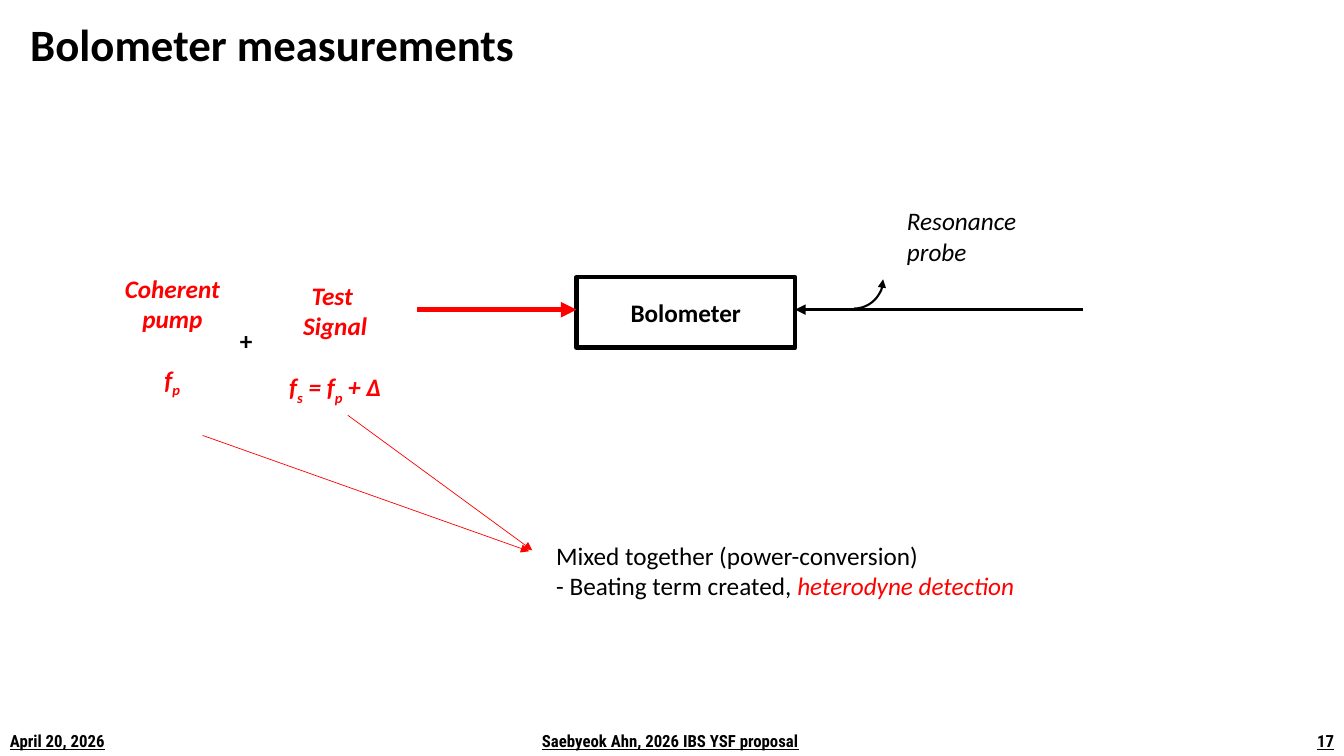
import pptx
import pptx.util
import pptx.dml.color
import pptx.enum.shapes
import pptx.enum.text
import pptx.oxml
from pptx.oxml.ns import qn

Pt = pptx.util.Pt
RGB = pptx.dml.color.RGBColor
ALIGN = pptx.enum.text.PP_ALIGN
ANCHOR = pptx.enum.text.MSO_ANCHOR
SHAPE = pptx.enum.shapes.MSO_SHAPE

BLACK = RGB(0, 0, 0)
RED = RGB(255, 0, 0)

PLAIN = dict(name="Calibri", size=Pt(18), color=BLACK)
BOLD = dict(PLAIN, bold=True)
SLANT = dict(PLAIN, italic=True)
PUMP = dict(BOLD, italic=True, color=RED)
SUB = dict(PUMP, base="-25000")
HEAD = dict(BOLD, size=Pt(32))
FOOT = dict(name="Roboto Condensed", size=Pt(12), color=BLACK,
            bold=True, underline=True)

WIDE, HIGH = 960, 540
FOOT_H = 21.6
FOOT_Y = HIGH - FOOT_H
GAP = 22
BEAM_Y = 221.2
BOX = (411.8, 198, 156.2, 50.4)
BOX_END = BOX[0] + BOX[2]
ARC = (589, 178.6, 41.8, 41.8)

TITLE = [(0, [("Bolometer measurements", HEAD)])]
LABEL = [(0, [("Bolometer", BOLD)])]

NOTES = [
    ((640.8, 143.3, 98.6, 51), ALIGN.LEFT,
     [(0, [("Resonance probe", SLANT)])]),
    ((66.2, 191.5, 113.8, 94.3), ALIGN.CENTER,
     [(0, [("Coherent pump", PUMP)]),
      (GAP, [("f", PUMP), ("p", SUB)])]),
    ((164.2, 229, 41.8, 28.8), ALIGN.LEFT,
     [(0, [("+", BOLD)])]),
    ((177.8, 196.6, 123.1, 94.3), ALIGN.CENTER,
     [(0, [("Test ", PUMP)]),
      (0, [("Signal", PUMP)]),
      (GAP, [("f", PUMP), ("s", SUB), (" = f", PUMP), ("p", SUB),
             (" + Δ", PUMP)])]),
    ((390.2, 382.3, 358.6, 51), ALIGN.LEFT,
     [(0, [("Mixed together (power-conversion)", PLAIN)]),
      (0, [("- Beating term created, ", PLAIN),
           ("heterodyne detection", dict(SLANT, color=RED))])]),
]

FEET = [
    ("April 20, 2026", 0, 216, ALIGN.LEFT),
    ("Saebyeok Ahn, 2026 IBS YSF proposal", 316.8, 324, ALIGN.CENTER),
    ("17", WIDE - 216, 216, ALIGN.RIGHT),
]

ARROWS = [
    ((773.3, BEAM_Y), (BOX_END, BEAM_Y), BLACK, 2.5),
    ((298.1, BEAM_Y), (BOX[0], BEAM_Y), RED, 3.75),
    ((144.7, 311), (378, 393.8), RED, 0.5),
    ((248.4, 296.6), (380.2, 393.1), RED, 0.5),
]


def style(run, look):
    for key, val in look.items():
        if key == "color":
            run.font.color.rgb = val
        elif key == "base":
            run._r.get_or_add_rPr().set("baseline", val)
        else:
            setattr(run.font, key, val)


def write(shape, paras, align, anchor=ANCHOR.TOP):
    frame = shape.text_frame
    frame.word_wrap = True
    frame.auto_size = pptx.enum.text.MSO_AUTO_SIZE.NONE
    frame.vertical_anchor = anchor
    for num, (gap, runs) in enumerate(paras):
        para = frame.add_paragraph() if num else frame.paragraphs[0]
        para.alignment = align
        if gap:
            para.space_before = Pt(gap)
        for text, look in runs:
            run = para.add_run()
            run.text = text
            style(run, look)


def add_text(slide, rect, paras, align, anchor=ANCHOR.TOP):
    box = slide.shapes.add_textbox(*map(Pt, rect))
    write(box, paras, align, anchor)


def stroke(shape, color, width, end=None):
    shape.line.color.rgb = color
    shape.line.width = Pt(width)
    if end:
        tip = pptx.oxml.parse_xml(
            '<a:%s xmlns:a="http://schemas.openxmlformats.org/drawingml/'
            '2006/main" type="triangle"/>' % end)
        shape.line._get_or_add_ln().append(tip)


def add_shape(slide, kind, rect):
    shape = slide.shapes.add_shape(kind, *map(Pt, rect))
    shape.shadow.inherit = False
    shape.fill.background()
    return shape


def main():
    deck = pptx.Presentation()
    deck.slide_width, deck.slide_height = Pt(WIDE), Pt(HIGH)
    slide = deck.slides.add_slide(deck.slide_layouts[5])

    title = slide.shapes.title
    title.left, title.top, title.width, title.height = map(
        Pt, (14.4, 8.6, 931, 50.4))
    write(title, TITLE, ALIGN.LEFT, ANCHOR.MIDDLE)
    title.text_frame.paragraphs[0].line_spacing = 0.9

    box = add_shape(slide, SHAPE.RECTANGLE, BOX)
    stroke(box, BLACK, 3.25)
    write(box, LABEL, ALIGN.CENTER, ANCHOR.MIDDLE)

    arc = add_shape(slide, SHAPE.ARC, ARC)
    arc.rotation = 90
    stroke(arc, BLACK, 1.5, "headEnd")

    for start, stop, color, width in ARROWS:
        line = slide.shapes.add_connector(
            pptx.enum.shapes.MSO_CONNECTOR.STRAIGHT, *map(Pt, start + stop))
        stroke(line, color, width, "tailEnd")
        line._element.spPr.append(
            pptx.oxml.xmlchemy.OxmlElement("a:effectLst"))

    for rect, align, paras in NOTES:
        add_text(slide, rect, paras, align)

    for text, left, width, align in FEET:
        add_text(slide, (left, FOOT_Y, width, FOOT_H),
                 [(0, [(text, FOOT)])], align, ANCHOR.MIDDLE)

    deck.save("out.pptx")


if __name__ == "__main__":
    main()
